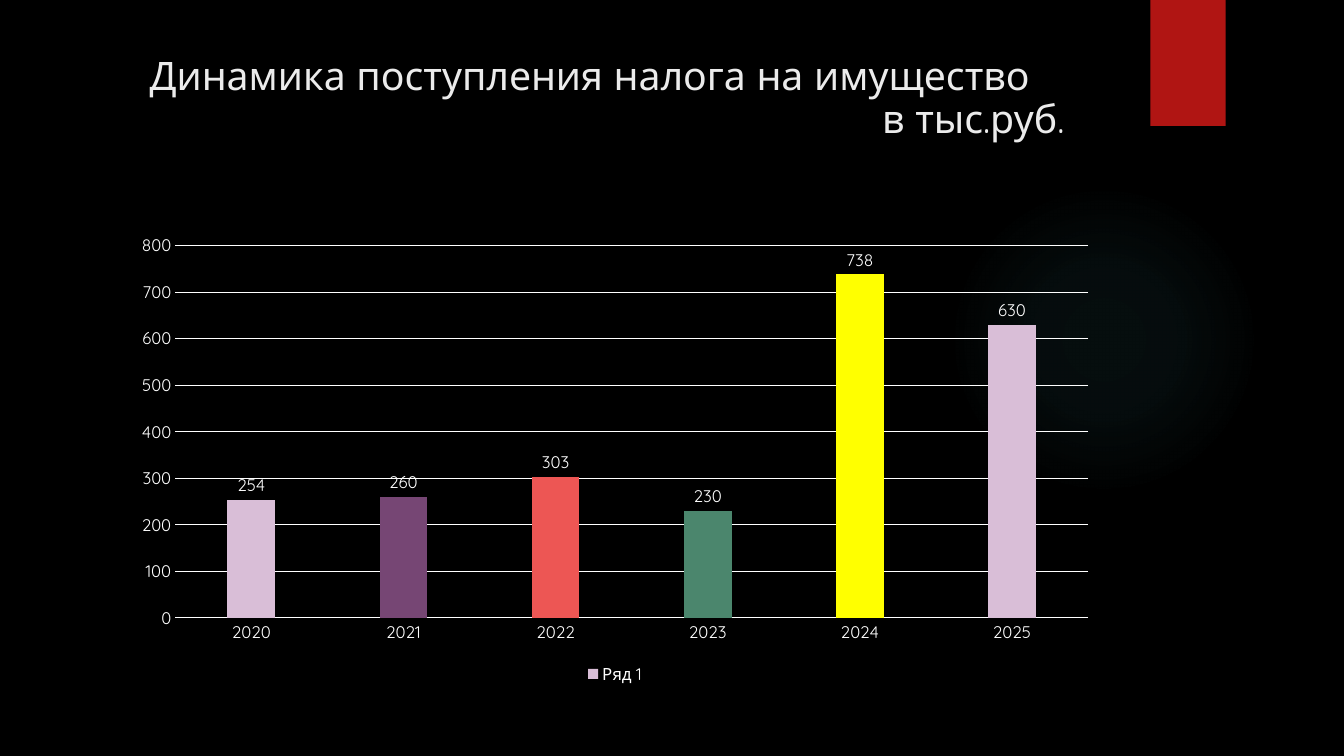
from dataclasses import dataclass

from lxml import etree
from pptx import Presentation
from pptx import util as u
from pptx.chart.data import CategoryChartData
from pptx.dml.color import RGBColor
from pptx.enum import chart as charts, shapes, text
from pptx.oxml import parse_xml
from pptx.oxml.ns import nsdecls, qn

WIDTH, HEIGHT = u.Inches(13.333), u.Inches(7.5)


@dataclass(frozen=True)
class Theme:
    """Colours, font and type sizes of the slide."""
    background: str = "000000"
    glow: str = "50B9C1"
    ribbon: str = "B01513"
    title: str = "EBEBEB"
    chart: str = "FFFFFF"
    bars: tuple = ("D9BED7", "764674", "ED5654", "4B866D", "FFFF00", "D9BED7")
    font: str = "Quicksand"
    title_size: int = 28
    chart_size: int = 12


THEME = Theme()


def place(left, top, width, height):
    """Turn percentages of the slide's size into lengths."""
    return [u.Emu(round(share * side / 100)) for share, side in
            zip((left, top, width, height), (WIDTH, HEIGHT) * 2)]


def paint(fill, color):
    """Give a fill one solid colour."""
    fill.solid()
    fill.fore_color.rgb = RGBColor.from_string(color)


def style_font(font, size, color):
    """Set the typeface, size and colour of a font."""
    font.name = THEME.font
    font.size = u.Pt(size)
    font.color.rgb = RGBColor.from_string(color)


def add_plain_shape(slide, kind, box, color):
    """Add a filled shape without outline or shadow."""
    shape = slide.shapes.add_shape(kind, *place(*box))
    shape.shadow.inherit = False
    shape.line.fill.background()
    paint(shape.fill, color)
    return shape


def add_glow(slide, box, color, stops):
    """Add a circle that fades out from its centre."""
    shape = add_plain_shape(slide, shapes.MSO_SHAPE.OVAL, box, color)
    gradient = parse_xml(f'<a:gradFill {nsdecls("a")} rotWithShape="1"><a:gsLst/></a:gradFill>')
    for position, alpha in stops:
        stop = etree.SubElement(gradient[0], qn("a:gs"), pos=str(position * 1000))
        tint = etree.SubElement(stop, qn("a:srgbClr"), val=color)
        etree.SubElement(tint, qn("a:alpha"), val=str(alpha * 1000))
    path = etree.SubElement(gradient, qn("a:path"), path="circle")
    etree.SubElement(path, qn("a:fillToRect"), l="50000", t="50000", r="50000", b="50000")
    solid = shape.fill._xPr.find(qn("a:solidFill"))
    solid.getparent().replace(solid, gradient)


def add_text(slide, lines, box, *, size, color, spacing):
    """Add a text box from pairs of text and alignment."""
    frame = slide.shapes.add_textbox(*place(*box)).text_frame
    frame.word_wrap = True
    frame.vertical_anchor = text.MSO_ANCHOR.TOP
    for index, (line, alignment) in enumerate(lines):
        paragraph = frame.add_paragraph() if index else frame.paragraphs[0]
        paragraph.alignment = alignment
        paragraph.line_spacing = spacing
        run = paragraph.add_run()
        run.text = line
        style_font(run.font, size, color)


def style_line(line, color):
    """Give a chart line its colour and width."""
    paint(line.fill, color)
    line.width = u.Pt(0.75)


def style_axes(chart):
    """Format both axes and the gridlines."""
    for axis in (chart.category_axis, chart.value_axis):
        axis.major_tick_mark = axis.minor_tick_mark = charts.XL_TICK_MARK.NONE
        style_font(axis.tick_labels.font, THEME.chart_size, THEME.chart)
    style_line(chart.category_axis.format.line, THEME.chart)
    values = chart.value_axis
    values.minimum_scale, values.maximum_scale, values.major_unit = 0, 800, 100
    values.format.line.fill.background()
    values.has_major_gridlines = True
    style_line(values.major_gridlines.format.line, THEME.chart)


def add_column_chart(slide, box, name, figures):
    """Add a column chart with one colour for each year."""
    data = CategoryChartData()
    data.categories = list(figures)
    data.add_series(name, list(figures.values()))
    chart = slide.shapes.add_chart(
        charts.XL_CHART_TYPE.COLUMN_CLUSTERED, *place(*box), data).chart
    style_font(chart.font, THEME.chart_size, THEME.chart)
    chart.has_title = False
    chart.has_legend = True
    chart.legend.position = charts.XL_LEGEND_POSITION.BOTTOM
    chart.legend.include_in_layout = False
    style_font(chart.legend.font, THEME.chart_size, THEME.chart)
    style_axes(chart)

    plot = chart.plots[0]
    plot.gap_width, plot.overlap, plot.vary_by_categories = 219, -27, False
    series = plot.series[0]
    paint(series.format.fill, THEME.bars[0])
    for index, color in enumerate(THEME.bars):
        if color != THEME.bars[0]:
            paint(series.points[index].format.fill, color)
    labels = series.data_labels
    labels.show_value = True
    labels.position = charts.XL_LABEL_POSITION.OUTSIDE_END
    style_font(labels.font, THEME.chart_size, THEME.chart)


def main():
    """Build the slide and save it."""
    presentation = Presentation()
    presentation.slide_width, presentation.slide_height = WIDTH, HEIGHT
    slide = presentation.slides.add_slide(presentation.slide_layouts[6])
    paint(slide.background.fill, THEME.background)
    add_glow(slide, (70.58, 24.4, 23.1, 41.07), THEME.glow, ((0, 7), (36, 6), (69, 0)))
    add_plain_shape(slide, shapes.MSO_SHAPE.RECTANGLE, (85.6, 0, 5.6, 16.67), THEME.ribbon)
    add_text(slide, (("Динамика поступления налога на имущество", text.PP_ALIGN.CENTER),
                     ("в тыс.руб.", text.PP_ALIGN.RIGHT)),
             (7.8, 6.9, 72.15, 20.4),
             size=THEME.title_size, color=THEME.title, spacing=0.9)
    add_column_chart(slide, (9.08, 29.87, 73.35, 61.2), "Ряд 1",
                     {"2020": 254, "2021": 260, "2022": 303,
                      "2023": 230, "2024": 738, "2025": 630})
    presentation.save("out.pptx")


if __name__ == "__main__":
    main()
